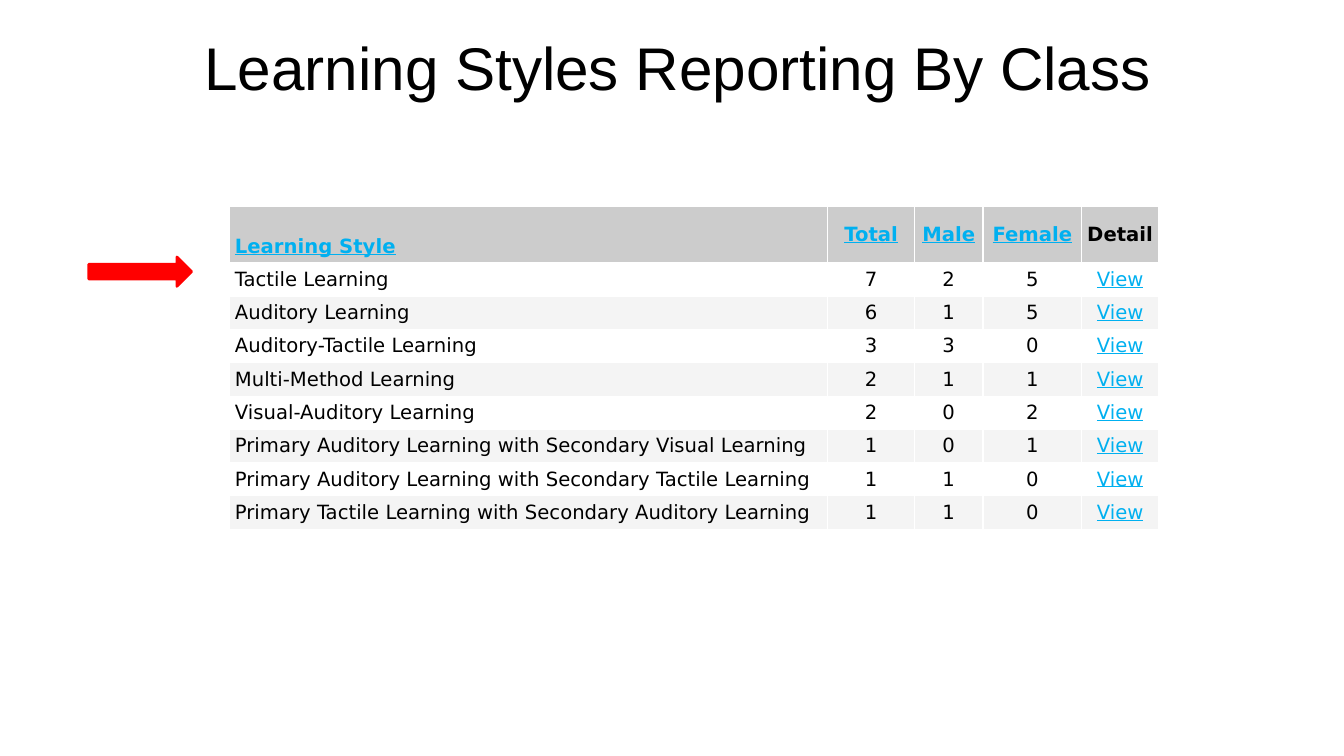
from pptx import Presentation
from pptx.dml.color import RGBColor
from pptx.enum.shapes import MSO_SHAPE as Shape
from pptx.enum.text import MSO_ANCHOR as Anchor, MSO_AUTO_SIZE as AutoSize, PP_ALIGN as Align
from pptx.util import Emu, Pt

PX = 9144  # 100 px to the inch
COLORS = {
    "text": "000000",
    "link": "00B0F0",
    "header": "CCCCCC",
    "odd": "FFFFFF",
    "even": "F4F4F4",
    "arrow": "FF0000",
}
MARGINS = ("margin_left", "margin_top", "margin_right", "margin_bottom")


def px(value):
    return Emu(value * PX)


def color(name):
    return RGBColor.from_string(COLORS[name])


def apply(target, formats):
    for key, value in formats.items():
        setattr(target, key, value)


class ReportSlide:
    title_font = {"name": "Arial", "size": Pt(43), "bold": False}
    table_font = {"name": "DejaVu Sans", "size": Pt(14)}

    def __init__(self, presentation):
        self.slide = presentation.slides.add_slide(presentation.slide_layouts[5])

    def label(self, paragraph, text, align, font, ink):
        paragraph.alignment = align
        run = paragraph.add_run()
        run.text = text
        apply(run.font, font)
        run.font.color.rgb = color(ink)

    def title(self, text, left, top, width, height):
        heading = self.slide.shapes.title
        apply(heading, {"left": px(left), "top": px(top), "width": px(width), "height": px(height)})
        frame = heading.text_frame
        apply(frame, {"word_wrap": True, "auto_size": AutoSize.NONE, "vertical_anchor": Anchor.MIDDLE})
        apply(frame, dict.fromkeys(MARGINS, px(13)))
        self.label(frame.paragraphs[0], text, Align.CENTER, self.title_font, "text")

    def table(self, rows, left, top, widths, heights):
        box = map(px, (left, top, sum(widths), sum(heights)))
        grid = self.slide.shapes.add_table(len(rows), len(widths), *box).table
        for column, width in zip(grid.columns, widths):
            column.width = px(width)
        for r, (values, height) in enumerate(zip(rows, heights)):
            grid.rows[r].height = px(height)
            for c, value in enumerate(values):
                self.cell(grid.cell(r, c), value, r, c, c == len(widths) - 1)

    def cell(self, cell, text, r, c, is_detail):
        is_header = r == 0
        # Header labels sort the table; the detail column links the other rows
        is_link = is_header != is_detail
        apply(cell, dict.fromkeys(MARGINS, px(5)))
        cell.vertical_anchor = Anchor.BOTTOM if is_header and c == 0 else Anchor.MIDDLE
        cell.fill.solid()
        cell.fill.fore_color.rgb = color("header" if is_header else "odd" if r % 2 else "even")
        font = {**self.table_font, "bold": is_header, "underline": is_link}
        align = Align.CENTER if c else Align.LEFT
        self.label(cell.text_frame.paragraphs[0], text, align, font, "link" if is_link else "text")

    def arrow(self, left, top, width, height):
        pointer = self.slide.shapes.add_shape(Shape.RIGHT_ARROW, *map(px, (left, top, width, height)))
        pointer.shadow.inherit = False
        pointer.fill.solid()
        pointer.fill.fore_color.rgb = color("arrow")
        pointer.line.color.rgb = color("arrow")
        pointer.line.width = Pt(2)


def main():
    presentation = Presentation()
    apply(presentation, {"slide_width": px(1333), "slide_height": px(750)})
    report = ReportSlide(presentation)

    # Title
    report.title("Learning Styles Reporting By Class", 33, 0, 1278, 131)

    # Students by learning style: total, male, female
    counts = [
        ("Tactile Learning", 7, 2, 5),
        ("Auditory Learning", 6, 1, 5),
        ("Auditory-Tactile Learning", 3, 3, 0),
        ("Multi-Method Learning", 2, 1, 1),
        ("Visual-Auditory Learning", 2, 0, 2),
        ("Primary Auditory Learning with Secondary Visual Learning", 1, 0, 1),
        ("Primary Auditory Learning with Secondary Tactile Learning", 1, 1, 0),
        ("Primary Tactile Learning with Secondary Auditory Learning", 1, 1, 0),
    ]
    rows = [("Learning Style", "Total", "Male", "Female", "Detail")]
    rows += [(*map(str, count), "View") for count in counts]
    report.table(rows, 228, 205, [593, 86, 68, 98, 76], [56] + [33] * len(counts))

    # Arrow to the leading style
    report.arrow(88, 255, 102, 29)

    presentation.save("out.pptx")


if __name__ == "__main__":
    main()
